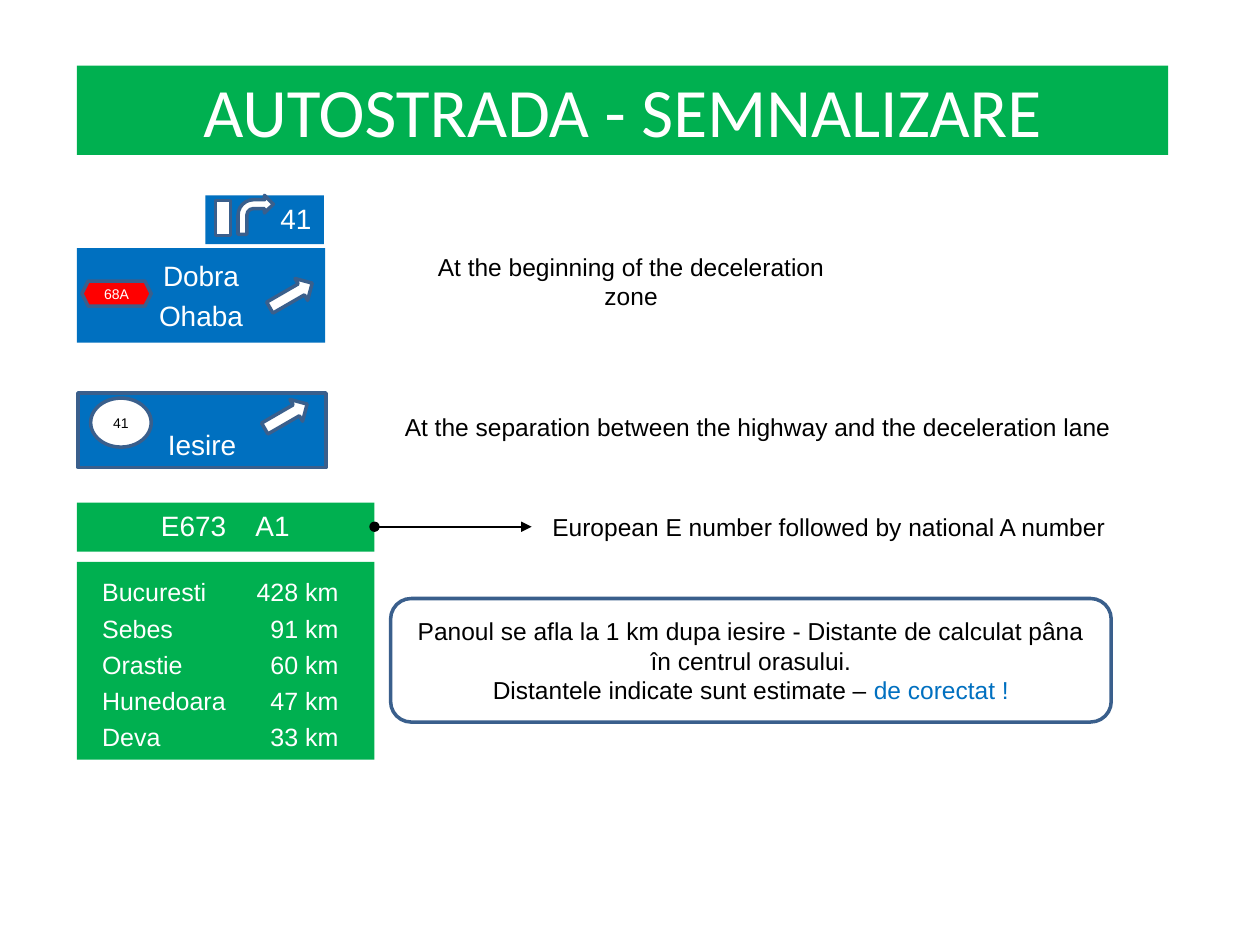
"""Build the slide on motorway signs."""
from dataclasses import dataclass
from typing import Optional

from lxml import etree
from pptx import Presentation
from pptx.dml.color import RGBColor
from pptx.enum import shapes, text
from pptx.oxml import ns
from pptx.util import Pt

KIND = shapes.MSO_SHAPE
SIDE = text.PP_ALIGN
EDGE = text.MSO_ANCHOR


@dataclass(frozen=True)
class Theme:
    """Colours, fonts and type sizes."""
    green: str = "00B050"
    blue: str = "0070C0"
    red: str = "FF0000"
    white: str = "FFFFFF"
    black: str = "000000"
    rim: str = "3A5F8C"
    head: str = "Calibri"
    body: str = "Arial"
    title: float = 39.6
    sign: float = 16
    list: float = 14.3
    note: float = 14
    badge: float = 8


LOOK = Theme()


@dataclass(frozen=True)
class Box:
    """One filled shape and its text."""
    at: tuple
    fill: str
    words: str = ""
    size: float = LOOK.sign
    ink: str = LOOK.white
    kind: KIND = KIND.RECTANGLE
    rim: Optional[str] = None
    side: SIDE = SIDE.CENTER
    edge: EDGE = EDGE.MIDDLE
    pad: tuple = (7.2, 3.6, 7.2, 3.6)
    wrap: bool = True
    gap: float = 0
    tab: Optional[tuple] = None
    turn: float = 0
    bend: tuple = ()


def label(left: float, top: float, wide: float, words: str) -> Box:
    """Describe a black caption on white."""
    return Box((left, top, wide, 24.5), LOOK.white, words, LOOK.note,
               LOOK.black, rim=LOOK.white)


def badge(kind: KIND, at: tuple, fill: str, words: str, ink: str) -> Box:
    """Describe a small road or exit number."""
    return Box(at, fill, words, LOOK.badge, ink, kind, LOOK.rim,
               pad=(0, 0, 0, 0), wrap=False)


def mark(kind: KIND, at: tuple, turn: float = 0, bend: tuple = ()) -> Box:
    """Describe a white symbol on a sign."""
    return Box(at, LOOK.white, kind=kind, rim=LOOK.rim, turn=turn, bend=bend)


def style(font, face: str, size: float, ink: str) -> None:
    """Set face, size and colour of a font."""
    font.name, font.size = face, Pt(size)
    font.color.rgb = RGBColor.from_string(ink)


def stop(para, spot: float, side: str) -> None:
    """Add one tab stop to a paragraph."""
    tabs = etree.SubElement(para._p.get_or_add_pPr(), ns.qn("a:tabLst"))
    etree.SubElement(tabs, ns.qn("a:tab"), pos=str(int(Pt(spot))), algn=side)


def write(shape, box: Box) -> None:
    """Put the text of a box into its shape."""
    frame = shape.text_frame
    frame.word_wrap = box.wrap
    frame.vertical_anchor = box.edge
    (frame.margin_left, frame.margin_top,
     frame.margin_right, frame.margin_bottom) = map(Pt, box.pad)
    frame.text = box.words
    for para in frame.paragraphs:
        para.alignment = box.side
        if box.gap:
            para.space_before = Pt(box.gap)
        if box.tab:
            stop(para, *box.tab)
        for run in para.runs:
            style(run.font, LOOK.body, box.size, box.ink)


def draw(slide, box: Box):
    """Draw one box and return its shape."""
    shape = slide.shapes.add_shape(box.kind, *map(Pt, box.at))
    shape.shadow.inherit = False
    shape.rotation = box.turn
    for spot, value in enumerate(box.bend):
        shape.adjustments[spot] = value
    shape.fill.solid()
    shape.fill.fore_color.rgb = RGBColor.from_string(box.fill)
    if box.rim:
        shape.line.color.rgb = RGBColor.from_string(box.rim)
        shape.line.width = Pt(2)
    else:
        shape.line.fill.background()
    if box.words:
        write(shape, box)
    return shape


def head(slide, words: str) -> None:
    """Place and format the title."""
    title = slide.shapes.title
    title.left, title.top, title.width, title.height = map(
        Pt, (44, 37.5, 623.5, 51))
    title.fill.solid()
    title.fill.fore_color.rgb = RGBColor.from_string(LOOK.green)
    frame = title.text_frame
    frame.text = words
    frame.auto_size = text.MSO_AUTO_SIZE.NONE
    frame.vertical_anchor = EDGE.MIDDLE
    para = frame.paragraphs[0]
    para.alignment = SIDE.CENTER
    style(para.runs[0].font, LOOK.head, LOOK.title, LOOK.white)


def link(slide, left: float, right: float, top: float) -> None:
    """Draw the pointer from a sign to its caption."""
    line = slide.shapes.add_connector(
        shapes.MSO_CONNECTOR.STRAIGHT, *map(Pt, (left, top, right, top)))
    line.line.color.rgb = RGBColor.from_string(LOOK.black)
    line.line.width = Pt(1)
    pen = line.line._get_or_add_ln()
    etree.SubElement(pen, ns.qn("a:headEnd"), type="oval")
    etree.SubElement(pen, ns.qn("a:tailEnd"), type="triangle")
    etree.SubElement(line._element.spPr, ns.qn("a:effectLst"))


NOTE = Box(
    (223.2, 342, 411.8, 70.6), LOOK.white,
    "Panoul se afla la 1 km dupa iesire - Distante de calculat pâna "
    "în centrul orasului.\nDistantele indicate sunt estimate – ",
    LOOK.note, LOOK.black, KIND.ROUNDED_RECTANGLE, LOOK.rim)

TOWNS = (("Bucuresti", 428), ("Sebes", 91), ("Orastie", 60),
         ("Hunedoara", 47), ("Deva", 33))

SIGNS = (
    Box((44, 141.8, 141.8, 54), LOOK.blue, "Dobra\nOhaba",
        pad=(0, 0, 0, 0), gap=3.2),
    badge(KIND.HEXAGON, (46.8, 160.6, 39.6, 14.4), LOOK.red, "68A",
          LOOK.white),
    mark(KIND.UP_ARROW, (159.1, 154.8, 14.4, 28), 60),
    label(226, 148.3, 269.3, "At the beginning of the deceleration zone"),
    Box((44.6, 224.6, 141.8, 42.5), LOOK.blue, "Iesire", rim=LOOK.rim,
        edge=EDGE.BOTTOM),
    badge(KIND.FLOWCHART_CONNECTOR, (51.8, 227.5, 34.6, 28), LOOK.white,
          "41", LOOK.black),
    label(223.2, 231.8, 419.8,
          "At the separation between the highway and the deceleration lane"),
    Box((44, 287.3, 170, 28), LOOK.green, "E673\tA1", side=SIDE.LEFT,
        edge=EDGE.TOP, pad=(48, 3.6, 7.2, 3.6), tab=(54, "l")),
    Box((44, 321.1, 170, 113), LOOK.green,
        "\n".join(f"{town}\t{far} km" for town, far in TOWNS), LOOK.list,
        side=SIDE.LEFT, edge=EDGE.TOP, pad=(14.4, 8.6, 5.8, 3.6), gap=3.5,
        tab=(135, "r")),
    label(303.8, 288.7, 339.8,
          "European E number followed by national A number"),
    Box((117.4, 111.6, 67.7, 28), LOOK.blue, "41", side=SIDE.RIGHT,
        edge=EDGE.TOP),
    mark(KIND.BENT_ARROW, (136, 111.6, 20.2, 22.3),
         bend=(0.25, 0.25, 0.25, 0.44)),
    mark(KIND.RECTANGLE, (123.1, 114.5, 8.6, 20.2)),
    mark(KIND.UP_ARROW, (156.2, 223.9, 14.4, 28), 60),
)


def main() -> None:
    """Build and save the deck."""
    deck = Presentation()
    deck.slide_width, deck.slide_height = Pt(720), Pt(540)
    slide = deck.slides.add_slide(deck.slide_layouts[5])
    head(slide, "AUTOSTRADA - SEMNALIZARE")
    note = draw(slide, NOTE)
    run = note.text_frame.paragraphs[-1].add_run()
    run.text = "de corectat !"
    style(run.font, LOOK.body, LOOK.note, LOOK.blue)
    for sign in SIGNS:
        draw(slide, sign)
    link(slide, 214, 303.8, 301)
    deck.save("out.pptx")


if __name__ == "__main__":
    main()
